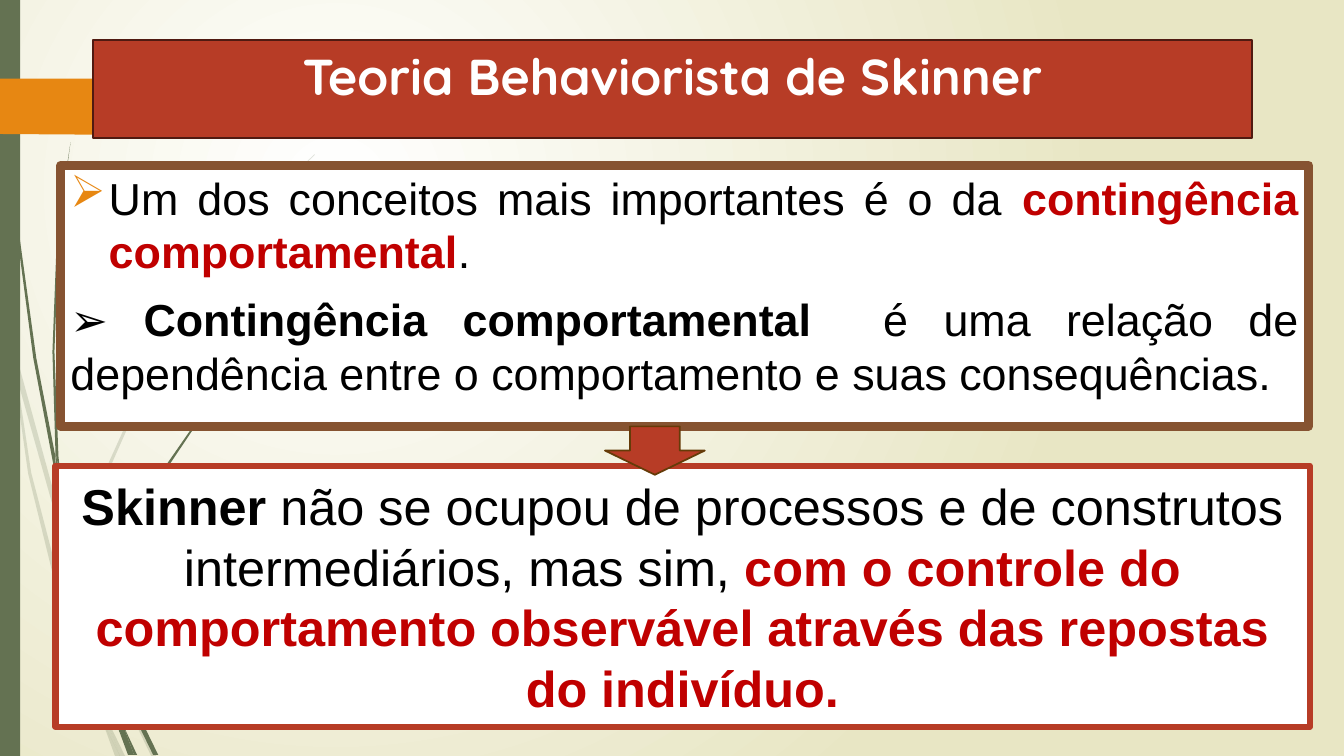
from lxml import etree
from pptx import Presentation
from pptx.dml.color import RGBColor
from pptx.enum.shapes import MSO_SHAPE as Preset
from pptx.enum.text import MSO_ANCHOR as Anchor, PP_ALIGN as Align
from pptx.oxml import parse_xml
from pptx.oxml.ns import nsdecls, qn
from pptx.util import Inches, Pt

GREEN, ORANGE, BRICK, RED = "647252", "E78712", "B73C26", "C00000"
BLACK, WHITE = "000000", "FFFFFF"

PALE_BLADES = [
    [(0.11, 3.5), (0.09, 3.22), (0, 2.82), (0, 2.99), (0.1, 3.44)],
    [(0.58, 5.22), (0.84, 5.99), (0.85, 5.86), (0.62, 5.2), (0.14, 3.45), (0.17, 3.76)],
    [(0.92, 6.07), (0.88, 5.96), (0.88, 6.1), (1.23, 6.94), (1.5, 7.5), (1.55, 7.5),
     (1.27, 6.92)],
    [(1.19, 7.5), (1.24, 7.5), (1.05, 7.11)],
    [(0.93, 6.83), (0.7, 6.19), (0.31, 4.69), (0.17, 3.76), (0.11, 3.5), (0.28, 4.7),
     (0.65, 6.21), (0.92, 6.93), (1.01, 7.14), (0.99, 7.07)],
    [(0.88, 5.84), (1.1, 4.62), (1.6, 3.49), (2.29, 2.45), (2.68, 1.98), (2.9, 1.75),
     (3.12, 1.54), (3.12, 1.53), (2.89, 1.75), (2.68, 1.97), (2.28, 2.44), (1.58, 3.48),
     (1.07, 4.61), (0.85, 5.84), (0.85, 5.86), (0.88, 5.96)],
    [(1.01, 7.14), (1.14, 7.5), (1.19, 7.5)],
    [(0.96, 6.92), (0.93, 6.83), (0.99, 7.07), (1.01, 7.14), (1.19, 7.5), (1.05, 7.11)],
]
DARK_BLADES = [
    [(0.07, 1.1), (0.17, 2.33), (0.33, 3.55), (0.56, 4.77), (0.57, 4.81), (0.55, 4.57),
     (0.55, 4.53), (0.36, 3.55), (0.19, 2.32), (0.08, 1.09), (0.05, 0.48), (0.04, 0),
     (0.03, 0), (0.04, 0.48)],
    [(1.13, 6.49), (1.1, 6.41), (1.11, 6.56), (1.32, 7.08), (1.52, 7.49), (1.57, 7.49),
     (1.36, 7.06)],
    [(1.1, 6.91), (0.98, 6.57), (0.72, 5.56), (0.64, 5.05), (0.57, 4.77), (0.68, 5.57),
     (0.93, 6.59), (1.11, 7.08), (1.17, 7.22), (1.16, 7.17)],
    [(0.6, 4.72), (0.58, 4.53), (0.54, 3.49), (0.58, 2.45), (0.63, 1.93), (0.7, 1.41),
     (0.62, 1.93), (0.56, 2.45), (0.52, 3.49), (0.55, 4.49)],
    [(1.33, 7.49), (1.36, 7.49), (1.22, 7.19)],
    [(0.57, 4.77), (0.64, 5.05), (0.6, 4.72), (0.55, 4.49), (0.55, 4.53)],
    [(1.11, 6.33), (1.25, 5.52), (1.58, 4.76), (2.05, 4.06), (2.31, 3.74), (2.45, 3.59),
     (2.61, 3.44), (2.45, 3.58), (2.31, 3.73), (2.04, 4.05), (1.56, 4.74), (1.22, 5.51),
     (1.06, 6.31), (1.1, 6.41)],
    [(1.17, 7.22), (1.27, 7.49), (1.31, 7.49)],
    [(1.16, 7.06), (1.1, 6.91), (1.16, 7.17), (1.17, 7.22), (1.3, 7.49), (1.33, 7.49),
     (1.22, 7.19)],
]
TAB = [(0, 0.78), (1.46, 0.78), (1.48, 0.79), (1.73, 1.04), (1.73, 1.08), (1.48, 1.33),
       (1.46, 1.34), (0, 1.33)]


def color(value):
    return RGBColor.from_string(value)


def paint(shape, fill, line=None, width=0):
    shape.shadow.inherit = False
    shape.fill.solid()
    shape.fill.fore_color.rgb = color(fill)
    if line:
        shape.line.color.rgb = color(line)
        shape.line.width = Pt(width)
    else:
        shape.line.fill.background()


def add_block(page, box, fill, line=None, width=0, preset=Preset.RECTANGLE):
    shape = page.shapes.add_shape(preset, *map(Inches, box))
    paint(shape, fill, line, width)
    return shape


def add_outline(page, points, fill, opacity=100):
    start, *rest = [(Inches(x), Inches(y)) for x, y in points]
    builder = page.shapes.build_freeform(*start)
    builder.add_line_segments(rest)
    shape = builder.convert_to_shape()
    paint(shape, fill)
    if opacity < 100:
        tint = shape.fill._xPr.find(".//" + qn("a:srgbClr"))
        etree.SubElement(tint, qn("a:alpha")).set("val", str(opacity * 1000))


def write(para, spans, size, align, font="Arial"):
    para.alignment = align
    for text, ink, bold in spans:
        span = para.add_run()
        span.text = text
        span.font.name, span.font.size, span.font.bold = font, Pt(size), bold
        span.font.color.rgb = color(ink)


def add_bullet(para, char, ink, indent):
    props = para._p.get_or_add_pPr()
    props.set("marL", str(Inches(indent)))
    props.set("indent", str(-Inches(indent)))
    tint = etree.SubElement(props, qn("a:buClr"))
    etree.SubElement(tint, qn("a:srgbClr")).set("val", ink)
    etree.SubElement(props, qn("a:buChar")).set("char", char)


def draw_background(page):
    fill = page.background.fill
    fill.gradient()
    for stop, value in zip(fill.gradient_stops, (WHITE, "E8E6C4")):
        stop.color.rgb = color(value)
    linear = page._element.find(".//" + qn("a:lin"))
    radial = parse_xml(
        f'<a:path {nsdecls("a")} path="circle">'
        '<a:fillToRect l="50000" t="50000" r="100000" b="100000"/></a:path>')
    linear.getparent().replace(linear, radial)


def draw_decoration(page):
    for blade in PALE_BLADES:
        add_outline(page, blade, GREEN, 20)
    for blade in DARK_BLADES:
        add_outline(page, blade, GREEN)
    add_block(page, (0, 0, 0.2, 7.5), GREEN)
    add_outline(page, TAB, ORANGE)


def draw_title(page, box):
    frame = add_block(page, box, BRICK, "501A11", 1.25).text_frame
    frame.word_wrap, frame.vertical_anchor = True, Anchor.TOP
    write(frame.paragraphs[0], [("Teoria Behaviorista de Skinner", WHITE, True)],
          36, Align.CENTER, "Quicksand")


def draw_concepts(page, box):
    frame = add_block(page, box, WHITE, "865331", 6).text_frame
    frame.word_wrap, frame.vertical_anchor = True, Anchor.TOP
    concept, definition = frame.paragraphs[0], frame.add_paragraph()
    write(concept, [
        ("Um dos conceitos mais importantes é o da ", BLACK, False),
        ("contingência comportamental", RED, True),
        (".", BLACK, False)], 32, Align.JUSTIFY)
    write(definition, [
        ("➢ ", BLACK, False),
        ("Contingência comportamental ", BLACK, True),
        (" é uma relação de dependência entre o comportamento e suas consequências.",
         BLACK, False)], 32, Align.JUSTIFY)
    for para in (concept, definition):
        para.space_before = Pt(10)
    add_bullet(concept, "➢", ORANGE, 0.38)


def draw_conclusion(page, box):
    frame = add_block(page, box, WHITE, BRICK, 4.5).text_frame
    frame.word_wrap, frame.vertical_anchor = True, Anchor.MIDDLE
    write(frame.paragraphs[0], [
        ("Skinner", BLACK, True),
        (" não se ocupou de processos e de construtos intermediários, mas sim, ",
         BLACK, False),
        ("com o controle do comportamento observável através das repostas do indivíduo.",
         RED, True)], 36, Align.CENTER)


def main():
    deck = Presentation()
    deck.slide_width, deck.slide_height = Inches(13.33), Inches(7.5)
    page = deck.slides.add_slide(deck.slide_layouts[6])
    draw_background(page)
    draw_decoration(page)
    draw_title(page, (0.92, 0.4, 11.5, 0.97))
    draw_concepts(page, (0.6, 1.64, 12.38, 2.59))
    draw_conclusion(page, (0.55, 4.62, 12.44, 2.59))
    add_block(page, (6, 4.23, 0.99, 0.48), BRICK, "653B08", 1.25, Preset.DOWN_ARROW)
    deck.save("out.pptx")


if __name__ == "__main__":
    main()
